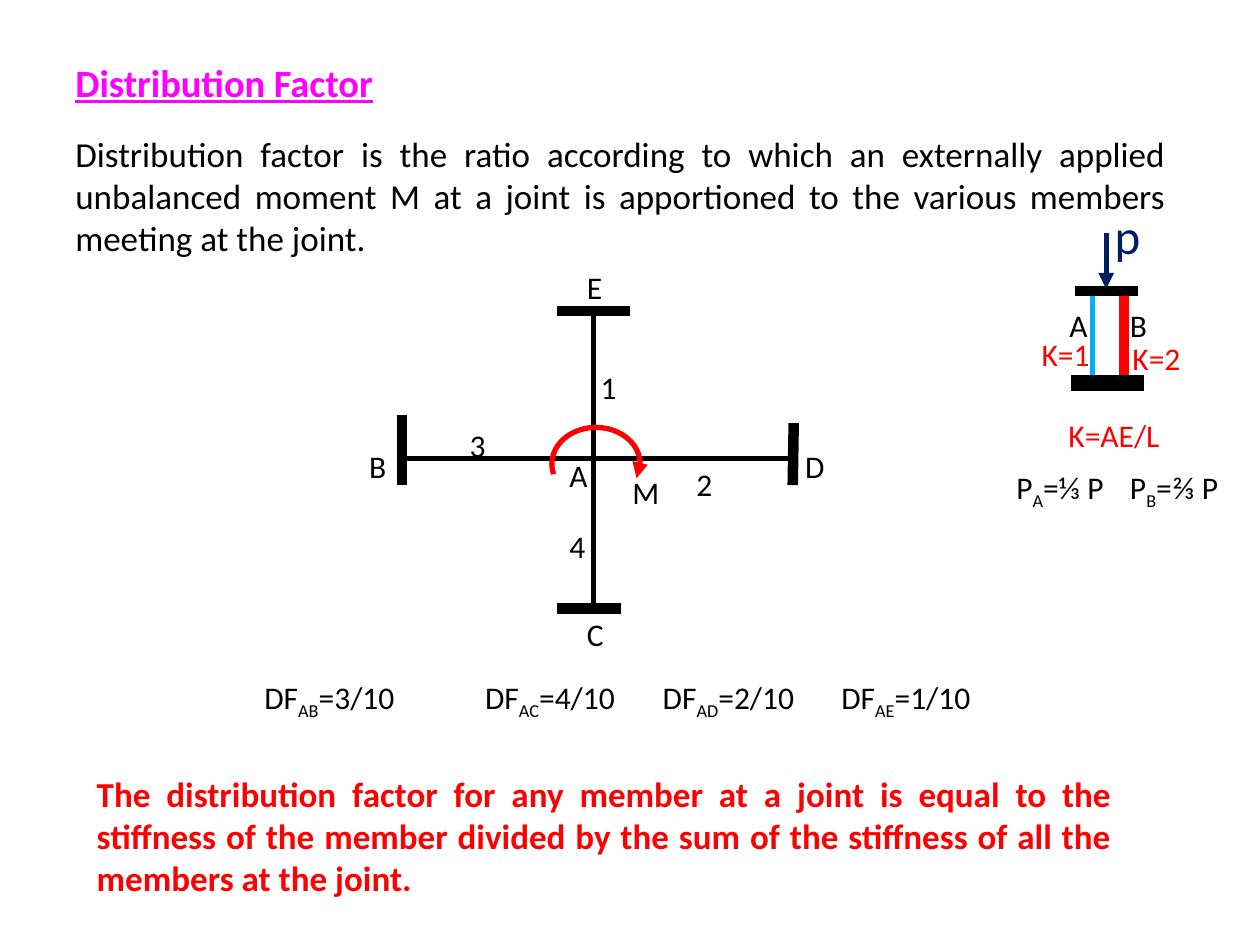
from dataclasses import dataclass

from lxml.etree import SubElement
from pptx import Presentation
from pptx.dml.color import RGBColor
from pptx.enum.shapes import MSO_CONNECTOR, MSO_SHAPE
from pptx.enum.text import MSO_AUTO_SIZE, PP_ALIGN
from pptx.oxml.ns import qn
from pptx.util import Cm, Pt


@dataclass(frozen=True)
class Theme:
    font: str = "Calibri"
    black: str = "000000"
    red: str = "FF0000"
    magenta: str = "FF00FF"
    navy: str = "002060"
    sky: str = "00B0F0"
    title: int = 22
    body: int = 20
    label: int = 18
    load: int = 28
    thin: int = 3
    thick: int = 6
    base: int = 9


THEME = Theme()


@dataclass(frozen=True)
class Label:
    text: str
    left: float
    top: float
    width: float = 0.74
    height: float = 0.86
    subscript: str = ""
    ending: str = ""
    color: str = THEME.black
    size: int = THEME.label
    bold: bool = False
    underline: bool = False
    justify: bool = False
    wrap: bool = True


@dataclass(frozen=True)
class Bar:
    start: tuple[float, float]
    end: tuple[float, float]
    weight: int = THEME.thick
    color: str = THEME.black
    arrow: bool = False


PARAGRAPHS = [
    Label("Distribution Factor", 1.27, 1.07, 6.58, 1.19, color=THEME.magenta,
          size=THEME.title, bold=True, underline=True, wrap=False),
    Label("Distribution factor is the ratio according to which an externally applied "
          "unbalanced moment M at a joint is apportioned to the various members "
          "meeting at the joint.", 1.27, 2.54, 22.48, 2.79,
          size=THEME.body, justify=True),
    Label("The distribution factor for any member at a joint is equal to the "
          "stiffness of the member divided by the sum of the stiffness of all the "
          "members at the joint.", 1.7, 15.44, 20.96, 2.82, color=THEME.red,
          size=THEME.body, bold=True, justify=True),
]

FACTORS = [
    Label("DF", left, 13.54, 3.38, 1.02, subscript=member, ending=f"={stiffness}/10")
    for member, stiffness, left in [
        ("AB", 3, 5.08), ("AC", 4, 9.53), ("AD", 2, 13.11), ("AE", 1, 16.71)
    ]
]

LOADED_BARS = [
    Bar((22.02, 5.87), (22.02, 7.57), THEME.thin, THEME.sky),
    Bar((22.66, 5.87), (22.66, 7.65), color=THEME.red),
    Bar((22.94, 5.87), (21.67, 5.87)),
    Bar((23.06, 7.72), (21.59, 7.72), THEME.base),
    Bar((22.3, 4.7), (22.3, 5.82), THEME.thin, THEME.navy, arrow=True),
]

LOADED_LABELS = [
    Label("p", 22.22, 4.01, 1.27, 1.27, color=THEME.navy, size=THEME.load),
    Label("A", 21.31, 6.05, 0.84),
    Label("B", 22.53, 6.05, 0.84),
    Label("K=1", 20.75, 6.63, 1.63, 1.02, color=THEME.red),
    Label("K=2", 22.58, 6.71, 1.47, 1.02, color=THEME.red),
    Label("K=AE/L", 21.29, 8.26, 2.41, 1.02, color=THEME.red),
    Label("P", 20.24, 9.32, 2.41, 1.02, subscript="A", ending="=⅓ P"),
    Label("P", 22.53, 9.32, 2.41, 1.02, subscript="B", ending="=⅔ P"),
]

FRAME_BARS = [
    Bar((8.1, 9.25), (16, 9.25), THEME.thin),
    Bar((11.96, 6.22), (11.96, 12.27), THEME.thin),
    Bar((11.23, 6.27), (12.7, 6.27)),
    Bar((11.23, 12.27), (12.52, 12.27)),
    Bar((8.1, 8.36), (8.1, 9.78)),
    Bar((16, 8.53), (15.98, 9.78)),
]

FRAME_LABELS = [Label("M", 12.5, 9.42, 1.09)] + [
    Label(text, left, top)
    for text, left, top in [
        ("1", 11.86, 7.29), ("2", 13.79, 9.25), ("3", 9.22, 8.46),
        ("4", 11.23, 10.49), ("A", 11.23, 9.07), ("B", 7.19, 8.89),
        ("C", 11.58, 12.27), ("D", 15.98, 8.89), ("E", 11.58, 5.28),
    ]
]


def style_line(shape, color: str, weight: int, arrow: bool) -> None:
    shape.line.color.rgb = RGBColor.from_string(color)
    shape.line.width = Pt(weight)
    if arrow:
        line = shape.line._get_or_add_ln()
        SubElement(line, qn("a:tailEnd")).set("type", "triangle")


def draw_label(page, label: Label) -> None:
    box = page.shapes.add_textbox(
        Cm(label.left), Cm(label.top), Cm(label.width), Cm(label.height))
    frame = box.text_frame
    frame.text = label.text
    frame.word_wrap = label.wrap
    frame.auto_size = MSO_AUTO_SIZE.SHAPE_TO_FIT_TEXT
    para = frame.paragraphs[0]
    if label.justify:
        para.alignment = PP_ALIGN.JUSTIFY
    if label.subscript:
        span = para.add_run()
        span.text = label.subscript
        span._r.get_or_add_rPr().set("baseline", "-25000")
        para.add_run().text = label.ending
    for span in para.runs:
        span.font.name = THEME.font
        span.font.size = Pt(label.size)
        span.font.color.rgb = RGBColor.from_string(label.color)
        span.font.bold = label.bold
        span.font.underline = label.underline


def draw_bar(page, bar: Bar) -> None:
    connector = page.shapes.add_connector(
        MSO_CONNECTOR.STRAIGHT, *(Cm(value) for value in bar.start + bar.end))
    style_line(connector, bar.color, bar.weight, bar.arrow)
    SubElement(connector._element.spPr, qn("a:effectLst"))


def draw_moment(page) -> None:
    moment = page.shapes.add_shape(
        MSO_SHAPE.ARC, Cm(11.28), Cm(8.46), Cm(1.47), Cm(1.78))
    moment.rotation = 270
    moment.adjustments[0] = 153.8
    moment.adjustments[1] = 65.74
    moment.shadow.inherit = False
    moment.fill.background()
    style_line(moment, THEME.red, THEME.thin, arrow=True)


def main() -> None:
    deck = Presentation()
    deck.slide_width, deck.slide_height = Cm(25.4), Cm(19.05)
    page = deck.slides.add_slide(deck.slide_layouts[6])
    for bar in LOADED_BARS + FRAME_BARS:
        draw_bar(page, bar)
    draw_moment(page)
    for label in PARAGRAPHS + FACTORS + LOADED_LABELS + FRAME_LABELS:
        draw_label(page, label)
    deck.save("out.pptx")


if __name__ == "__main__":
    main()
